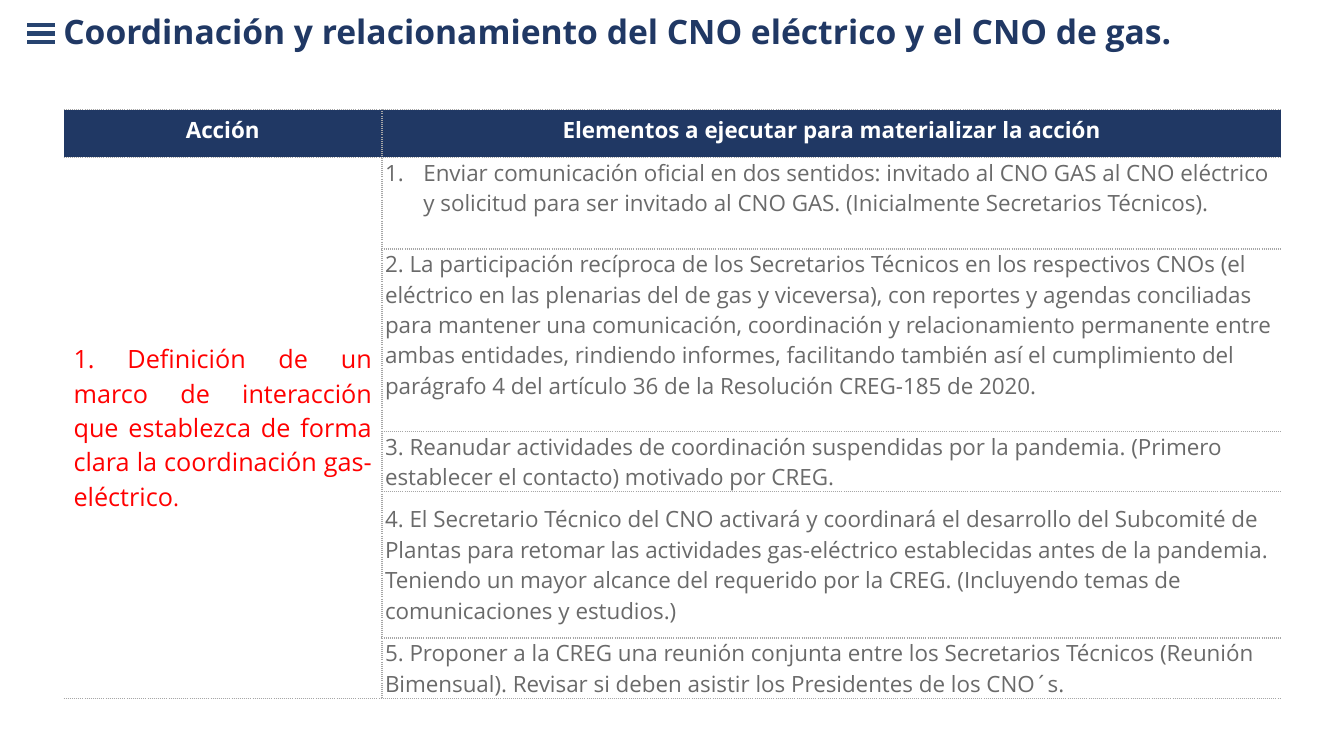
from lxml import etree
from pptx import Presentation
from pptx import util as u
from pptx.dml.color import RGBColor
from pptx.enum import shapes, text
from pptx.oxml import ns

HUES = {"navy": "203864", "bar": "274470", "rule": "A6A6A6",
        "red": "FF0000", "gray": "6A6A6A", "white": "FFFFFF"}
COLS, ROWS = 160, 90
TOP, MID = text.MSO_ANCHOR.TOP, text.MSO_ANCHOR.MIDDLE
MID_X, BOTH = text.PP_ALIGN.CENTER, text.PP_ALIGN.JUSTIFY

# Wording, row height in grid rows, anchor
STEPS = [
    ("Enviar comunicación oficial en dos sentidos: invitado al CNO GAS al CNO "
     "eléctrico y solicitud para ser invitado al CNO GAS. (Inicialmente "
     "Secretarios Técnicos).", 10.92, TOP),
    ("2. La participación recíproca de los Secretarios Técnicos en los "
     "respectivos CNOs (el eléctrico en las plenarias del de gas y viceversa), "
     "con reportes y agendas conciliadas para mantener una comunicación, "
     "coordinación y relacionamiento permanente entre ambas entidades, "
     "rindiendo informes, facilitando también así el cumplimiento del "
     "parágrafo 4 del artículo 36 de la Resolución CREG-185 de 2020.", 21.72, TOP),
    ("3. Reanudar actividades de coordinación suspendidas por la pandemia. "
     "(Primero establecer el contacto) motivado por CREG.", 7.2, MID),
    ("4. El Secretario Técnico del CNO activará y coordinará el desarrollo del "
     "Subcomité de Plantas para retomar las actividades gas-eléctrico "
     "establecidas antes de la pandemia. Teniendo un mayor alcance del "
     "requerido por la CREG. (Incluyendo temas de comunicaciones y estudios.)",
     17.4, MID),
    ("5. Proponer a la CREG una reunión conjunta entre los Secretarios Técnicos "
     "(Reunión Bimensual). Revisar si deben asistir los Presidentes de los "
     "CNO´s.", 7.2, MID),
]


class Deck:
    font = "Open Sans"

    def __init__(self):
        self.prs = Presentation()
        self.prs.slide_width, self.prs.slide_height = u.Inches(13.33), u.Inches(7.5)
        self.slide = self.prs.slides.add_slide(self.prs.slide_layouts[6])

    def x(self, cols):
        return int(self.prs.slide_width * cols / COLS)

    def y(self, rows):
        return int(self.prs.slide_height * rows / ROWS)

    def hue(self, name):
        return RGBColor.from_string(HUES[name])

    def run(self, para, words, size, hue, bold=False):
        run = para.add_run()
        run.text = words
        font = run.font
        font.name, font.size, font.bold = self.font, u.Pt(size), bold
        font.color.rgb = self.hue(hue)

    def line(self, left, right, row):
        bar = self.slide.shapes.add_connector(
            shapes.MSO_CONNECTOR.STRAIGHT,
            self.x(left), self.y(row), self.x(right), self.y(row))
        bar.line.color.rgb = self.hue("bar")
        bar.line.width = u.Pt(3)
        etree.SubElement(bar._element.spPr, ns.qn("a:effectLst"))

    def title(self, words, left, top, wide, high):
        box = self.slide.shapes.add_textbox(
            self.x(left), self.y(top), self.x(wide), self.y(high))
        frame = box.text_frame
        frame.word_wrap, frame.vertical_anchor = True, MID
        para = frame.paragraphs[0]
        para.line_spacing = 0.9
        self.run(para, words, 24, "navy", True)

    def table(self, left, top, wides, highs):
        table = self.slide.shapes.add_table(
            len(highs), len(wides), self.x(left), self.y(top),
            self.x(sum(wides)), self.y(sum(highs))).table
        table.horz_banding = False
        for col, wide in zip(table.columns, wides):
            col.width = self.x(wide)
        for row, high in zip(table.rows, highs):
            row.height = self.y(high)
        for r in range(len(highs)):
            for c in range(len(wides)):
                cell = table.cell(r, c)
                self.edges(cell, ("R" if c == 0 else "L") + "TB")
                if r == 0:
                    cell.fill.solid()
                    cell.fill.fore_color.rgb = self.hue("navy")
                else:
                    cell.fill.background()
        return table

    def edges(self, cell, shown):
        """Dot the shown sides of a cell and clear the others."""
        props = cell._tc.get_or_add_tcPr()
        for side in "LRTB":
            edge = etree.SubElement(props, ns.qn("a:ln" + side), w=str(u.Pt(1)))
            if side not in shown:
                etree.SubElement(edge, ns.qn("a:noFill"))
                continue
            fill = etree.SubElement(edge, ns.qn("a:solidFill"))
            etree.SubElement(fill, ns.qn("a:srgbClr"), val=HUES["rule"])
            etree.SubElement(edge, ns.qn("a:prstDash"), val="sysDot")

    def cell(self, cell, runs, align=None, anchor=TOP, tight=False):
        """Write (words, size, hue, bold) runs; tight drops the margins."""
        cell.vertical_anchor = anchor
        if tight:
            cell.margin_left = cell.margin_right = u.Inches(0.03)
            cell.margin_top = cell.margin_bottom = 0
        para = cell.text_frame.paragraphs[0]
        para.alignment = align
        for run in runs:
            self.run(para, *run)
        return para

    def number(self, para):
        props = para._p.get_or_add_pPr()
        hang = u.Inches(0.38)
        props.set("marL", str(hang))
        props.set("indent", str(-hang))
        etree.SubElement(props, ns.qn("a:buAutoNum"), type="arabicPeriod")


def main():
    deck = Deck()
    for row in (3, 4, 5):
        deck.line(3.24, 6.6, row)
    deck.title("Coordinación y relacionamiento del CNO eléctrico y el CNO de gas.",
               6.36, -1.32, 152.4, 10.68)

    plan = deck.table(7.56, 13.08, (37.92, 107.04),
                      [5.64] + [high for _, high, _ in STEPS])
    heads = ("Acción", "Elementos a ejecutar para materializar la acción")
    for col, head in enumerate(heads):
        deck.cell(plan.cell(0, col), [(head, 16, "white", True)], MID_X)

    goal = plan.cell(1, 0)
    goal.merge(plan.cell(len(STEPS), 0))
    deck.cell(goal, [("1. Definición de un marco de interacción que establezca de "
                      "forma clara la coordinación gas-eléctrico", 18, "red"),
                     (".", 16, "red")], BOTH, MID)

    for row, (words, _, anchor) in enumerate(STEPS, 1):
        para = deck.cell(plan.cell(row, 1), [(words, 16, "gray")],
                         anchor=anchor, tight=True)
        if row == 1:
            deck.number(para)
    deck.prs.save("out.pptx")


if __name__ == "__main__":
    main()
